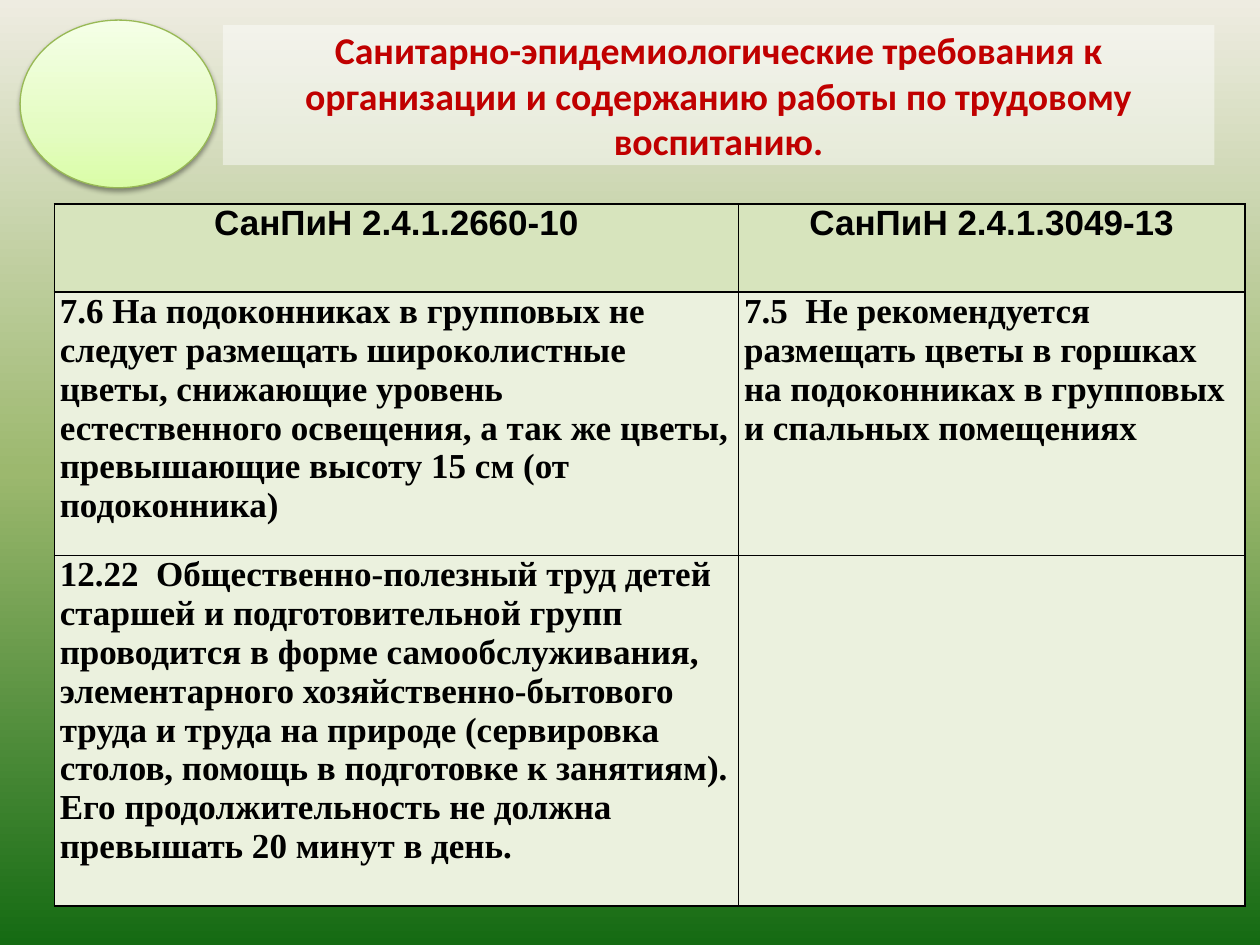
from dataclasses import dataclass

from lxml.etree import SubElement
from pptx import Presentation
from pptx.dml.color import RGBColor as RGB
from pptx.enum.shapes import MSO_SHAPE as Shape
from pptx.enum.text import MSO_ANCHOR as Anchor, PP_ALIGN as Align
from pptx.oxml.ns import qn
from pptx.util import Pt


@dataclass(frozen=True)
class Theme:
    sky: tuple = ((0, "EEECE1"), (50, "9CB86E"), (100, "156B13"))
    badge: tuple = ((0, "DAFDA7"), (35, "E4FCC2"), (100, "F5FFE7"))
    badge_line: str = "98B955"
    title: str = "C00000"
    panel: str = "FFFFFF"
    ink: str = "000000"
    header_fill: str = "D7E4BD"
    body_fill: str = "EBF1DE"
    title_size: float = 21.6
    table_size: float = 20
    title_font: str = "Calibri"
    header_font: str = "Arial"
    body_font: str = "Times New Roman"


@dataclass(frozen=True)
class CellStyle:
    fill: str
    font: str
    align: Align


THEME = Theme()
HEADER = CellStyle(THEME.header_fill, THEME.header_font, Align.CENTER)
BODY = CellStyle(THEME.body_fill, THEME.body_font, Align.LEFT)

TITLE = ("Санитарно-эпидемиологические требования к организации "
         "и содержанию работы по трудовому воспитанию.")
COLUMN_WIDTHS = (391, 289.4)
ROW_HEIGHTS = (50.3, 150.4, 200.3)
RULES = (
    ("СанПиН 2.4.1.2660-10", "СанПиН 2.4.1.3049-13"),
    ("7.6 На подоконниках в групповых не следует размещать широколистные "
     "цветы, снижающие уровень естественного освещения, а так же цветы, "
     "превышающие высоту 15 см (от подоконника)",
     "7.5  Не рекомендуется размещать цветы в горшках на подоконниках "
     "в групповых и спальных помещениях"),
    ("12.22  Общественно-полезный труд детей старшей и подготовительной "
     "групп проводится в форме самообслуживания, элементарного "
     "хозяйственно-бытового труда и труда на природе (сервировка столов, "
     "помощь в подготовке к занятиям). Его продолжительность не должна "
     "превышать 20 минут в день.", ""),
)


def add_color(parent, color: str, alpha: int = 100) -> None:
    srgb = SubElement(parent, qn("a:srgbClr"), val=color)
    if alpha < 100:
        SubElement(srgb, qn("a:alpha"), val=str(alpha * 1000))


def set_gradient(fill, owner, stops: tuple, angle: int) -> None:
    fill.gradient()
    fill.gradient_angle = angle
    stop_list = owner.find(".//" + qn("a:gsLst"))
    for stop in list(stop_list):
        stop_list.remove(stop)
    for position, color in stops:
        add_color(SubElement(stop_list, qn("a:gs"), pos=str(position * 1000)), color)


def format_text(frame, font: str, size: float, color: str, align: Align) -> None:
    for paragraph in frame.paragraphs:
        paragraph.alignment = align
        for run in paragraph.runs:
            run.font.name, run.font.size, run.font.bold = font, Pt(size), True
            run.font.color.rgb = RGB.from_string(color)


def add_badge(slide) -> None:
    badge = slide.shapes.add_shape(Shape.OVAL, Pt(11.5), Pt(11.5), Pt(112.3), Pt(95.8))
    set_gradient(badge.fill, badge.element, THEME.badge, 90)
    badge.line.color.rgb = RGB.from_string(THEME.badge_line)
    badge.line.width = Pt(0.75)
    badge.shadow.inherit = False
    effects = badge.element.spPr.find(qn("a:effectLst"))
    shadow = SubElement(effects, qn("a:outerShdw"), blurRad=str(Pt(3.1)),
                        dist=str(Pt(1.6)), dir="5400000", rotWithShape="0")
    add_color(shadow, THEME.ink, 38)


def set_title(slide) -> None:
    title = slide.shapes.title
    title.left, title.top, title.width, title.height = Pt(127.4), Pt(14.4), Pt(566.6), Pt(79.9)
    title.fill.solid()
    title.fill.fore_color.rgb = RGB.from_string(THEME.panel)
    panel_color = title.element.spPr.find(".//" + qn("a:srgbClr"))
    SubElement(panel_color, qn("a:alpha"), val="46000")
    title.line.fill.background()
    frame = title.text_frame
    frame.text = TITLE
    frame.word_wrap = True
    frame.vertical_anchor = Anchor.MIDDLE
    format_text(frame, THEME.title_font, THEME.title_size, THEME.title, Align.CENTER)


def add_borders(cell) -> None:
    properties = cell._tc.get_or_add_tcPr()
    for index, side in enumerate("LRTB"):
        border = SubElement(properties, qn(f"a:ln{side}"), w=str(Pt(1)))
        add_color(SubElement(border, qn("a:solidFill")), THEME.ink)
        properties.insert(index, border)


def fill_cell(cell, text: str, style: CellStyle) -> None:
    cell.text_frame.text = text
    cell.margin_left = cell.margin_right = Pt(3.2)
    cell.margin_top = cell.margin_bottom = 0
    cell.fill.solid()
    cell.fill.fore_color.rgb = RGB.from_string(style.fill)
    add_borders(cell)
    format_text(cell.text_frame, style.font, THEME.table_size, THEME.ink, style.align)


def add_rules_table(slide) -> None:
    table = slide.shapes.add_table(
        len(ROW_HEIGHTS), len(COLUMN_WIDTHS), Pt(31), Pt(116.7),
        Pt(sum(COLUMN_WIDTHS)), Pt(sum(ROW_HEIGHTS))).table
    for column, width in zip(table.columns, COLUMN_WIDTHS):
        column.width = Pt(width)
    for row_index, (row, height) in enumerate(zip(table.rows, ROW_HEIGHTS)):
        row.height = Pt(height)
        style = HEADER if row_index == 0 else BODY
        for cell, text in zip(row.cells, RULES[row_index]):
            fill_cell(cell, text, style)


def main() -> None:
    deck = Presentation()
    deck.slide_width, deck.slide_height = Pt(720), Pt(540)
    slide = deck.slides.add_slide(deck.slide_layouts[5])
    # Background
    set_gradient(slide.background.fill, slide.element, THEME.sky, 270)
    # Heading
    add_badge(slide)
    set_title(slide)
    # Comparison of the two sets of rules
    add_rules_table(slide)
    deck.save("out.pptx")


if __name__ == "__main__":
    main()
